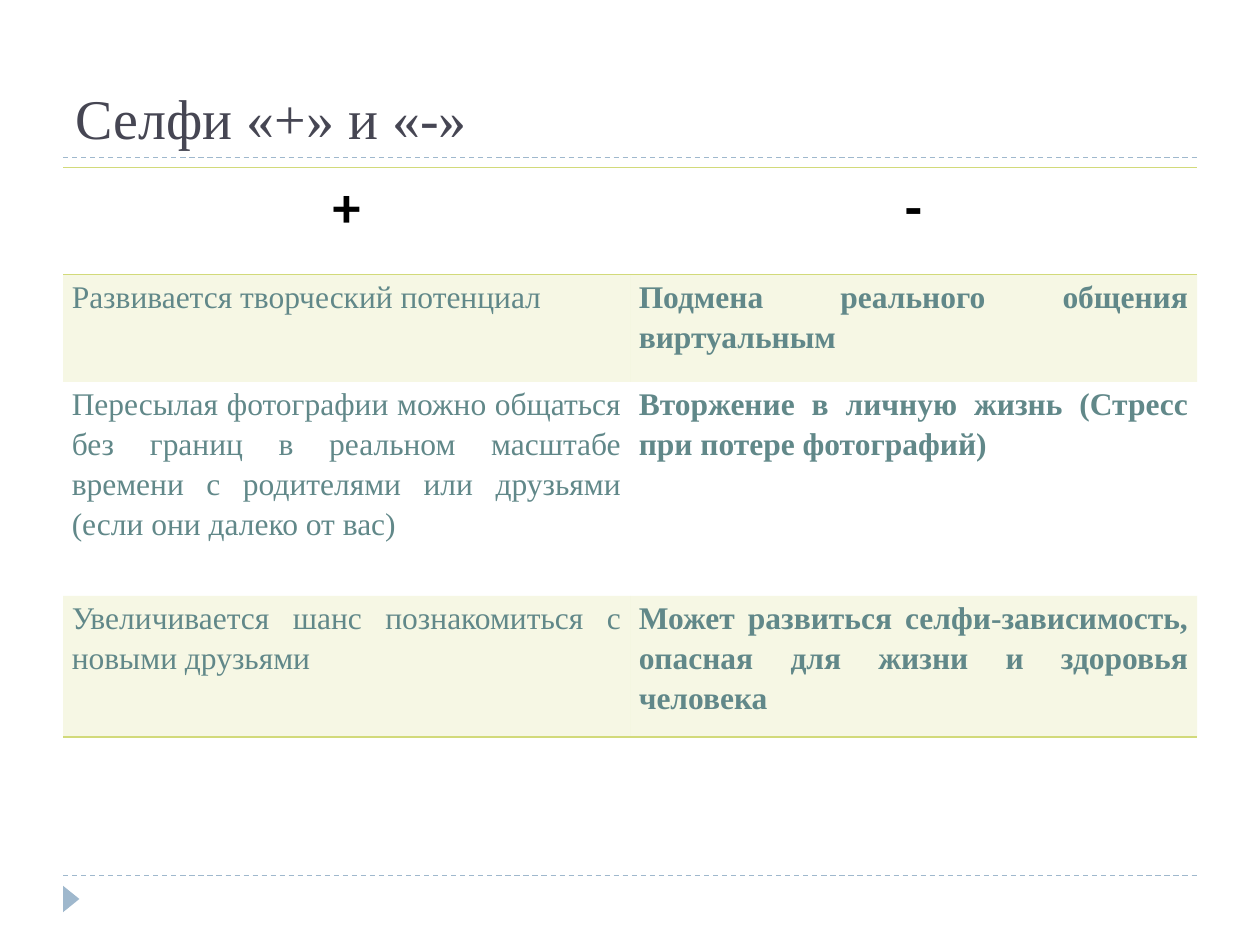
from dataclasses import dataclass

from lxml import etree
from pptx import Presentation
from pptx.dml.color import RGBColor
from pptx.enum import dml, shapes, text
from pptx.oxml import ns
from pptx.util import Inches, Pt


@dataclass(frozen=True)
class Theme:
    """Colours, fonts and type sizes of the slide."""
    title_ink: str = "464653"
    sign_ink: str = "000000"
    body_ink: str = "618889"
    rule: str = "9FB8CD"
    accent: str = "D2DA7A"
    band_alpha: int = 20
    serif: str = "Times New Roman"
    sans: str = "Calibri"
    large: int = 32
    body: int = 18


THEME = Theme()
ROWS = [
    ("+", "-"),
    ("Развивается творческий потенциал",
     "Подмена реального общения виртуальным"),
    ("Пересылая фотографии можно общаться без границ в реальном масштабе "
     "времени с родителями или друзьями (если они далеко от вас)",
     "Вторжение в личную жизнь (Стресс при потере фотографий)"),
    ("Увеличивается шанс познакомиться с новыми друзьями",
     "Может развиться селфи-зависимость, опасная для жизни и здоровья человека"),
]
ROW_HEIGHTS = [0.85, 0.85, 1.7, 1.12]


def add_xml(parent, tag, **attributes):
    """Append a DrawingML element and return it."""
    return etree.SubElement(parent, ns.qn(tag), attributes)


def style_text(paragraph, font_name, size, colour, bold=False):
    """Format every run of a paragraph."""
    for run in paragraph.runs:
        run.font.name = font_name
        run.font.size = Pt(size)
        run.font.bold = bold
        run.font.color.rgb = RGBColor.from_string(colour)


def add_dashed_rule(slide, left, top, width):
    """Draw a thin dashed line across the given width."""
    rule = slide.shapes.add_connector(
        shapes.MSO_CONNECTOR.STRAIGHT, left, top, left + width, top)
    rule.line.color.rgb = RGBColor.from_string(THEME.rule)
    rule.line.width = Pt(0.75)
    rule.line.dash_style = dml.MSO_LINE.DASH
    add_xml(rule._element.spPr, "a:effectLst")


def add_header(slide, left, top, width, height):
    """Place the title with a rule along its lower edge."""
    add_dashed_rule(slide, left, top + height, width)
    title = slide.shapes.title
    title.left, title.top, title.width, title.height = left, top, width, height
    frame = title.text_frame
    frame.text = "Селфи «+» и «-»"
    frame.vertical_anchor = text.MSO_ANCHOR.BOTTOM
    frame.auto_size = text.MSO_AUTO_SIZE.NONE
    frame.paragraphs[0].alignment = text.PP_ALIGN.LEFT
    style_text(frame.paragraphs[0], THEME.serif, THEME.large, THEME.title_ink)


def add_footer(slide, left, top, width):
    """Place the lower rule and the marker that points right below it."""
    add_dashed_rule(slide, left, top, width)
    marker = slide.shapes.add_shape(
        shapes.MSO_SHAPE.ISOSCELES_TRIANGLE,
        left - Inches(0.04), top + Inches(0.12), Inches(0.21), Inches(0.13))
    marker.rotation = 90
    marker.shadow.inherit = False
    marker.fill.solid()
    marker.fill.fore_color.rgb = RGBColor.from_string(THEME.rule)
    marker.line.fill.background()


def style_cell(cell, banded, ruled_sides):
    """Give a cell its tint and the borders on the named sides."""
    properties = cell._tc.get_or_add_tcPr()
    for side in "LRTB":
        border = add_xml(properties, f"a:ln{side}", w=str(Pt(1)))
        if side in ruled_sides:
            fill = add_xml(border, "a:solidFill")
            add_xml(fill, "a:srgbClr", val=THEME.accent)
        else:
            add_xml(border, "a:noFill")
    if banded:
        cell.fill.solid()
        cell.fill.fore_color.rgb = RGBColor.from_string(THEME.accent)
        tint = properties.find(ns.qn("a:solidFill"))[0]
        add_xml(tint, "a:alpha", val=str(THEME.band_alpha * 1000))
    else:
        cell.fill.background()


def add_comparison(slide, left, top, width):
    """Place the table of advantages and drawbacks."""
    table = slide.shapes.add_table(
        len(ROWS), 2, left, top, width, Inches(sum(ROW_HEIGHTS))).table
    table.first_row = table.horz_banding = False
    for column in table.columns:
        column.width = width // 2
    borders = {0: "TB", 1: "T", len(ROWS) - 1: "B"}
    for row_index, entries in enumerate(ROWS):
        table.rows[row_index].height = Inches(ROW_HEIGHTS[row_index])
        for column_index, entry in enumerate(entries):
            cell = table.cell(row_index, column_index)
            cell.text_frame.text = entry
            paragraph = cell.text_frame.paragraphs[0]
            if row_index == 0:
                paragraph.alignment = text.PP_ALIGN.CENTER
                style_text(paragraph, THEME.sans, THEME.large, THEME.sign_ink, True)
            else:
                cell.margin_left = cell.margin_right = Inches(0.07)
                cell.margin_top = cell.margin_bottom = 0
                paragraph.alignment = text.PP_ALIGN.JUSTIFY
                paragraph.line_spacing = 1.15
                style_text(paragraph, THEME.serif, THEME.body, THEME.body_ink,
                           column_index == 1)
            style_cell(cell, row_index % 2 == 1, borders.get(row_index, ""))


def main():
    """Build and save the slide."""
    deck = Presentation()
    deck.slide_width, deck.slide_height = Inches(10), Inches(7.5)
    slide = deck.slides.add_slide(deck.slide_layouts[5])
    left, width = Inches(0.5), Inches(9)
    add_footer(slide, left, Inches(6.95), width)
    add_header(slide, left, Inches(0.17), width, Inches(1.08))
    add_comparison(slide, left, Inches(1.33), width)
    deck.save("out.pptx")


if __name__ == "__main__":
    main()
